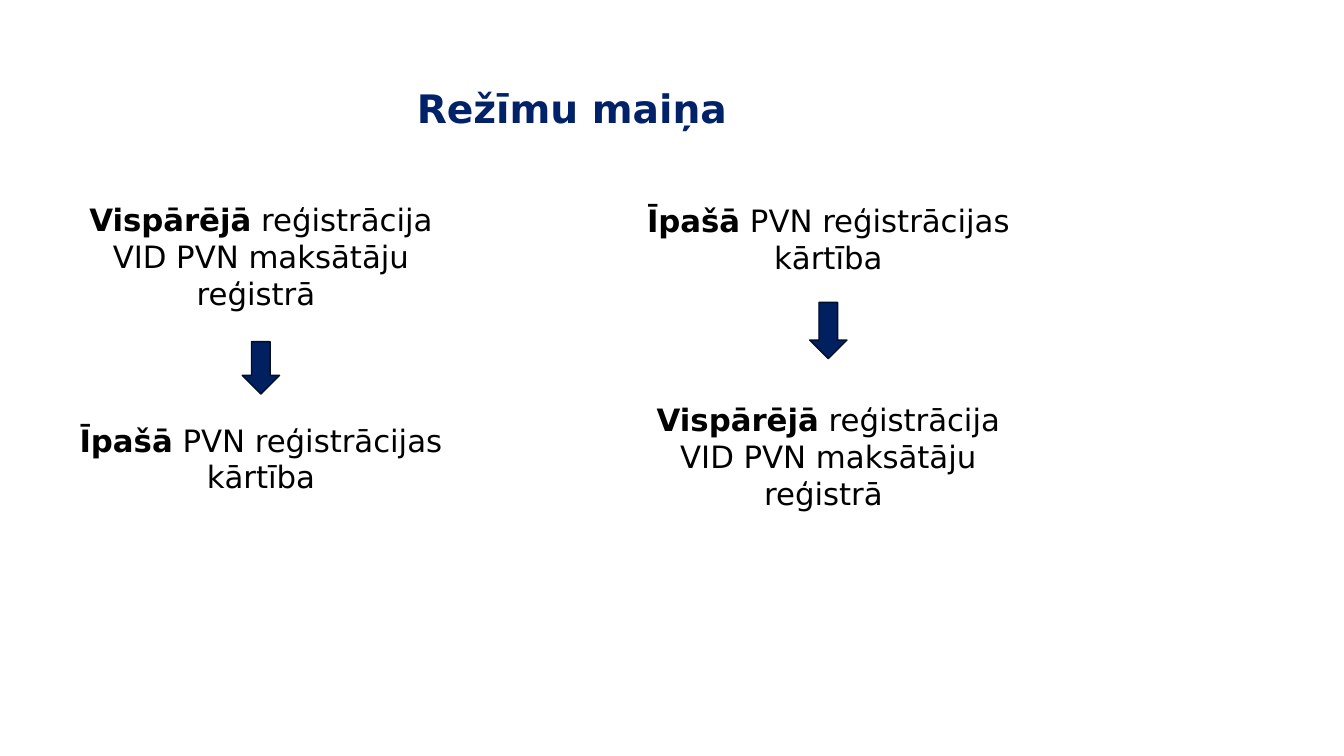
import pptx
import pptx.dml.color
import pptx.enum.shapes
import pptx.enum.text
import pptx.util
from pptx.util import Cm

TITLE_BLUE = pptx.dml.color.RGBColor(0x01, 0x22, 0x69)
ARROW_BLUE = pptx.dml.color.RGBColor(0x00, 0x20, 0x60)
ARROW_EDGE = pptx.dml.color.RGBColor(0x00, 0x0E, 0x2A)
BLACK = pptx.dml.color.RGBColor(0x00, 0x00, 0x00)
FONT_NAME = "DejaVu Sans"
CENTER = pptx.enum.text.PP_ALIGN.CENTER

COLUMN_WIDTH = 10.31
ARROW_WIDTH = 0.94
GENERAL = ("Vispārējā", " reģistrācija VID PVN maksātāju reģistrā ")
SPECIAL = ("Īpašā", " PVN reģistrācijas kārtība")


def add_run(paragraph, text, size, color, bold):
    run = paragraph.add_run()
    run.text = text
    run.font.name = FONT_NAME
    run.font.size = pptx.util.Pt(size)
    run.font.color.rgb = color
    run.font.bold = bold


presentation = pptx.Presentation()
presentation.slide_width = Cm(33.87)
presentation.slide_height = Cm(19.05)
slide = presentation.slides.add_slide(presentation.slide_layouts[5])

title = slide.shapes.title
title.left, title.top, title.width, title.height = Cm(0.86), Cm(0.69), Cm(27.1), Cm(3.56)
title.text_frame.vertical_anchor = pptx.enum.text.MSO_ANCHOR.MIDDLE
title.text_frame.margin_top = Cm(0.79)
title_paragraph = title.text_frame.paragraphs[0]
title_paragraph.alignment = CENTER
title_paragraph.line_spacing = 0.9
add_run(title_paragraph, "Režīmu maiņa", 28, TITLE_BLUE, True)

# Each column: left, (regime, top, height) of both boxes, arrow top and height
columns = [
    (1.42, [(GENERAL, 4.93, 3.07), (SPECIAL, 10.49, 3.07)], 8.61, 1.32),
    (15.72, [(SPECIAL, 4.95, 2.13), (GENERAL, 9.98, 3.07)], 7.62, 1.42),
]

for left, regimes, arrow_top, arrow_height in columns:
    for (regime, description), top, height in regimes:
        box = slide.shapes.add_textbox(Cm(left), Cm(top), Cm(COLUMN_WIDTH), Cm(height))
        box.text_frame.word_wrap = True
        box.text_frame.auto_size = pptx.enum.text.MSO_AUTO_SIZE.SHAPE_TO_FIT_TEXT
        paragraph = box.text_frame.paragraphs[0]
        paragraph.alignment = CENTER
        add_run(paragraph, regime, 22, BLACK, True)
        add_run(paragraph, description, 22, BLACK, False)

    arrow = slide.shapes.add_shape(
        pptx.enum.shapes.MSO_SHAPE.DOWN_ARROW,
        Cm(left + (COLUMN_WIDTH - ARROW_WIDTH) / 2), Cm(arrow_top),
        Cm(ARROW_WIDTH), Cm(arrow_height))
    arrow.shadow.inherit = False
    arrow.fill.solid()
    arrow.fill.fore_color.rgb = ARROW_BLUE
    arrow.line.color.rgb = ARROW_EDGE
    arrow.line.width = pptx.util.Pt(1)

presentation.save("out.pptx")
